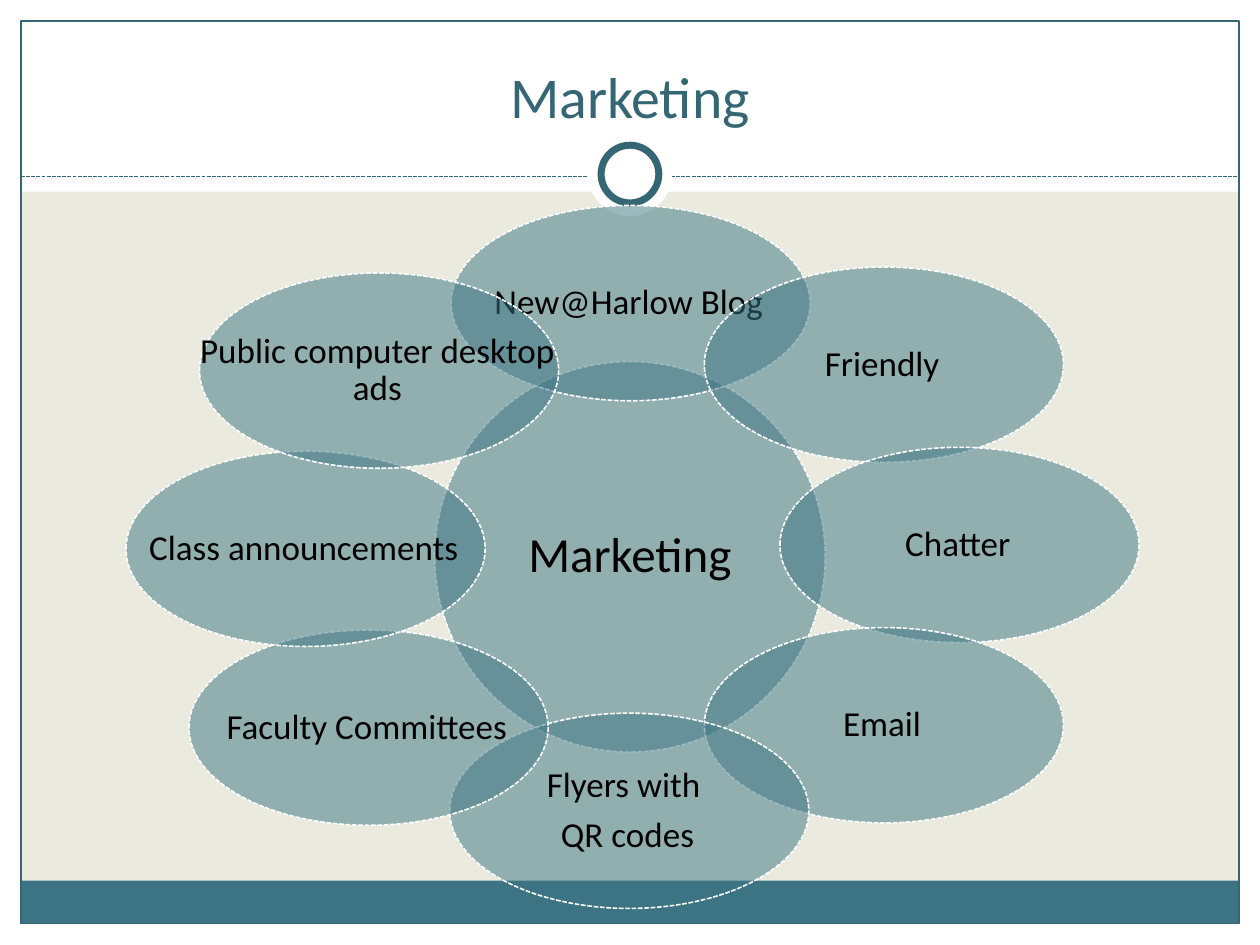
"""Build the Marketing slide: a hub circle ringed by overlapping channel ellipses."""
from lxml.etree import SubElement
from pptx import Presentation
from pptx.dml.color import RGBColor
from pptx.enum.dml import MSO_LINE
from pptx.enum.shapes import MSO_CONNECTOR, MSO_SHAPE
from pptx.enum.text import MSO_ANCHOR, MSO_AUTO_SIZE, PP_ALIGN
from pptx.oxml.ns import qn
from pptx.util import Pt

THEME = {
    "font": "Calibri",
    "background": RGBColor.from_string("EAEBDE"),
    "white": RGBColor.from_string("FFFFFF"),
    "teal": RGBColor.from_string("3C7483"),
    "dark_teal": RGBColor.from_string("356674"),
    "text": RGBColor.from_string("000000"),
    "title_size": 33,
    "hub_size": 28,
    "channel_size": 20,
}


def add_figure(preset, box, fill=None, line=None, width=0.75):
    figure = slide.shapes.add_shape(preset, *map(Pt, box))
    figure.shadow.inherit = False
    if fill:
        figure.fill.solid()
        figure.fill.fore_color.rgb = THEME[fill]
    else:
        figure.fill.background()
    if line:
        figure.line.color.rgb = THEME[line]
        figure.line.width = Pt(width)
    else:
        figure.line.fill.background()
    return figure


def write_text(shape, lines, size, color, frame_format, paragraph_format):
    frame = shape.text_frame
    frame.text = "\n".join(lines)
    for name, value in frame_format.items():
        setattr(frame, name, value)
    for paragraph in frame.paragraphs:
        for name, value in paragraph_format.items():
            setattr(paragraph, name, value)
        for run in paragraph.runs:
            run.font.name = THEME["font"]
            run.font.size = Pt(THEME[size])
            run.font.color.rgb = THEME[color]


presentation = Presentation()
presentation.slide_width, presentation.slide_height = Pt(720), Pt(540)
slide = presentation.slides.add_slide(presentation.slide_layouts[5])
slide.background.fill.solid()
slide.background.fill.fore_color.rgb = THEME["background"]

for box, fill, line in [
    ((0, 528, 720, 12), "white", None),
    ((0, 0, 720, 109.5), "white", None),
    ((0, 0, 12, 540), "white", None),
    ((708, 0, 12, 540), "white", None),
    ((11.75, 503.25, 695.75, 24.5), "teal", None),
    ((12, 12, 696, 515.75), None, "dark_teal"),
]:
    add_figure(MSO_SHAPE.RECTANGLE, box, fill, line)

divider = slide.shapes.add_connector(MSO_CONNECTOR.STRAIGHT, Pt(12), Pt(100.8), Pt(708), Pt(100.8))
divider.line.color.rgb = THEME["dark_teal"]
divider.line.width = Pt(0.75)
divider.line.dash_style = MSO_LINE.SQUARE_DOT
SubElement(divider._element.spPr, qn("a:effectLst"))

add_figure(MSO_SHAPE.OVAL, (336, 75.5, 48, 48), "white")
add_figure(MSO_SHAPE.OVAL, (343.5, 83, 33, 33), "white", "dark_teal", 4)

title = slide.shapes.title
title.left, title.top, title.width, title.height = Pt(24), Pt(18), Pt(672), Pt(60)
write_text(
    title, ["Marketing"], "title_size", "dark_teal",
    {"vertical_anchor": MSO_ANCHOR.BOTTOM, "word_wrap": True, "auto_size": MSO_AUTO_SIZE.NONE},
    {"alignment": PP_ALIGN.CENTER},
)
slide.shapes._spTree.append(title._element)

HUB = (223.2, 223.2)
CHANNEL = (205.2, 111.6)
for lines, (left, top), (width, height), size, left_inset, inset in [
    (["Marketing"], (248.4, 206.6), HUB, "hub_size", 2.8, 2.8),
    (["New@Harlow Blog"], (257.75, 117.4), CHANNEL, "channel_size", 0, 2),
    (["Friendly"], (402.5, 152.6), CHANNEL, "channel_size", 0, 2),
    (["Chatter"], (445.7, 255.6), CHANNEL, "channel_size", 0, 2),
    (["Email"], (402.5, 358.6), CHANNEL, "channel_size", 0, 2),
    (["Flyers with ", "QR codes"], (257, 407.5), CHANNEL, "channel_size", 0, 2),
    (["Faculty Committees"], (108, 360), CHANNEL, "channel_size", 0, 2),
    (["Class announcements"], (72, 257.8), CHANNEL, "channel_size", 0, 2),
    (["Public computer desktop ads"], (114, 156), CHANNEL, "channel_size", 0, 2),
]:
    box = (left, top, width, height)
    ellipse = add_figure(MSO_SHAPE.OVAL, box, "teal", "white", 0.9)
    ellipse.line.dash_style = MSO_LINE.SQUARE_DOT
    fill_color = ellipse._element.spPr.find(qn("a:solidFill")).find(qn("a:srgbClr"))
    SubElement(fill_color, qn("a:alpha"), val="50000")
    label = slide.shapes.add_textbox(*map(Pt, box))
    write_text(
        label, lines, size, "text",
        {
            "word_wrap": True,
            "vertical_anchor": MSO_ANCHOR.MIDDLE,
            "margin_left": Pt(left_inset),
            "margin_top": Pt(inset),
            "margin_right": Pt(inset),
            "margin_bottom": Pt(inset),
        },
        {
            "alignment": PP_ALIGN.CENTER,
            "line_spacing": 0.9,
            "space_after": Pt(round(THEME[size] * 0.35)),
        },
    )

presentation.save("out.pptx")
